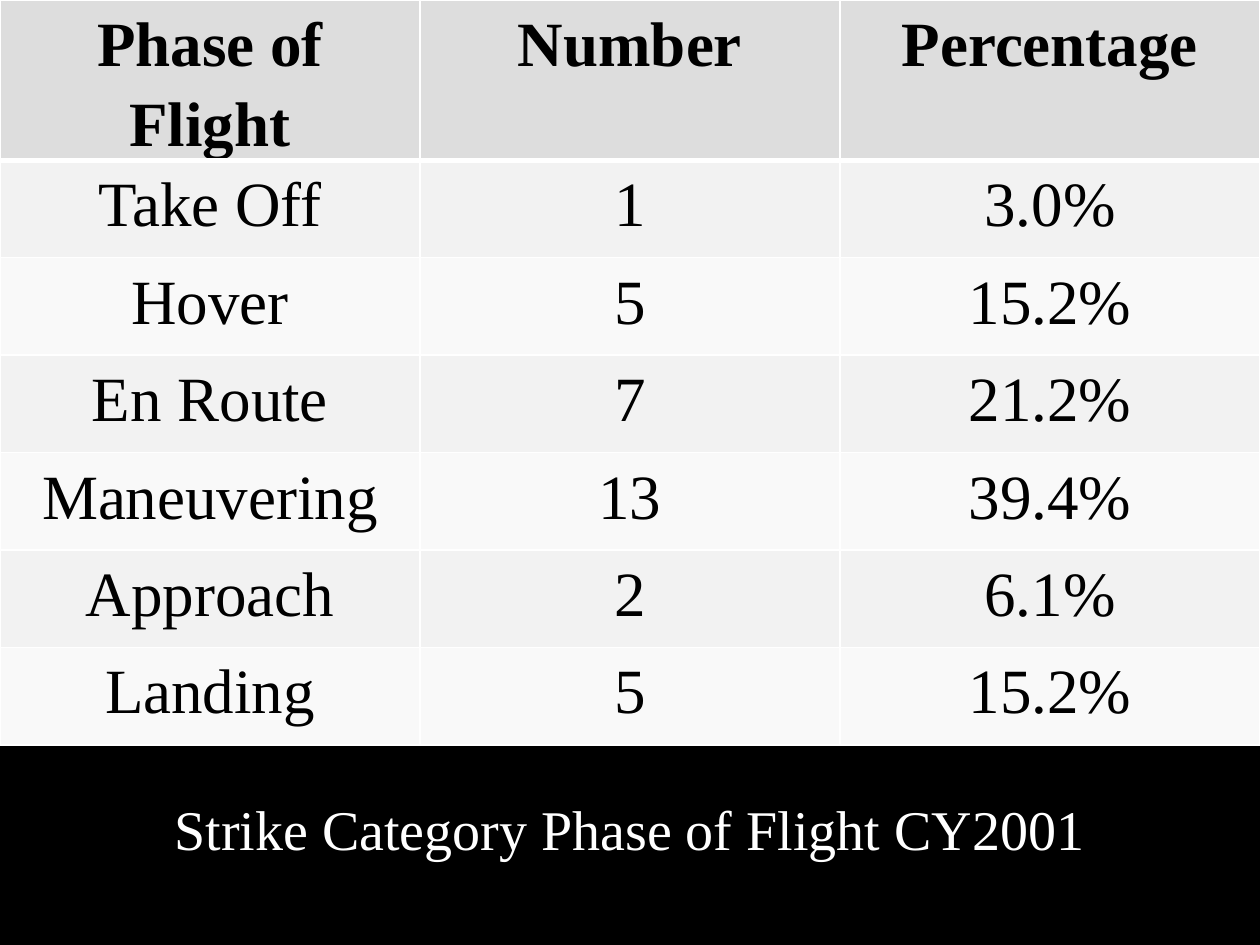
from lxml import etree
from pptx import Presentation
from pptx import util as u
from pptx.dml.color import RGBColor
from pptx.enum import text
from pptx.oxml.ns import qn

# Content
CAPTION = "Strike Category Phase of Flight CY2001"
ROWS = [
    ("Phase of Flight", "Number", "Percentage"),
    ("Take Off", "1", "3.0%"),
    ("Hover", "5", "15.2%"),
    ("En Route", "7", "21.2%"),
    ("Maneuvering", "13", "39.4%"),
    ("Approach", "2", "6.1%"),
    ("Landing", "5", "15.2%"),
]
HEADER_FILL, BAND_FILLS = "DDDDDD", ("F9F9F9", "F2F2F2")
FONT = "Times New Roman"
W, H = 1260, 945
ROWS_H, TABLE_H = 682, 758


def px(n):
    return u.Emu(round(n * 914400 / 126))


def rgb(value):
    return RGBColor.from_string(value)


def write(tf, words, size, color, bold=False):
    tf.text = words
    p = tf.paragraphs[0]
    p.alignment = text.PP_ALIGN.CENTER
    font = p.runs[0].font
    font.name, font.size, font.bold = FONT, u.Pt(size), bold
    font.color.rgb = rgb(color)
    return p


def add_borders(cell, bottom):
    tc_pr = cell._tc.get_or_add_tcPr()
    widths = {"a:lnL": 1, "a:lnR": 1, "a:lnT": 1, "a:lnB": bottom}
    for i, (tag, width) in enumerate(widths.items()):
        ln = etree.Element(qn(tag), w=str(u.Pt(width)))
        fill = etree.SubElement(ln, qn("a:solidFill"))
        etree.SubElement(fill, qn("a:srgbClr"), val="FFFFFF")
        tc_pr.insert(i, ln)


prs = Presentation()
prs.slide_width, prs.slide_height = px(W), px(H)
s = prs.slides.add_slide(prs.slide_layouts[6])
s.background.fill.solid()
s.background.fill.fore_color.rgb = rgb("000000")

# Table of flight phases
frame = s.shapes.add_table(len(ROWS), len(ROWS[0]), 0, 0, px(W), px(ROWS_H))
frame.height = px(TABLE_H)
table = frame.table
table.horz_banding = False
for i, row in enumerate(ROWS):
    header = i == 0
    for j, words in enumerate(row):
        cell = table.cell(i, j)
        cell.margin_left = cell.margin_right = px(9)
        cell.margin_top = cell.margin_bottom = 0
        cell.fill.solid()
        cell.fill.fore_color.rgb = rgb(HEADER_FILL if header else BAND_FILLS[i % 2])
        write(cell.text_frame, words, 36, "000000", header).line_spacing = 1.15
        # A thick rule divides the header from the body
        add_borders(cell, 3 if header else 1)
        if i == 1:
            cell._tc.tcPr.find(qn("a:lnT")).set("w", str(u.Pt(3)))

# Caption
sp = s.shapes.add_textbox(0, px(788), px(W), px(81))
sp.text_frame.word_wrap = True
sp.text_frame.auto_size = text.MSO_AUTO_SIZE.SHAPE_TO_FIT_TEXT
write(sp.text_frame, CAPTION, 32, "FFFFFF")

prs.save("out.pptx")
